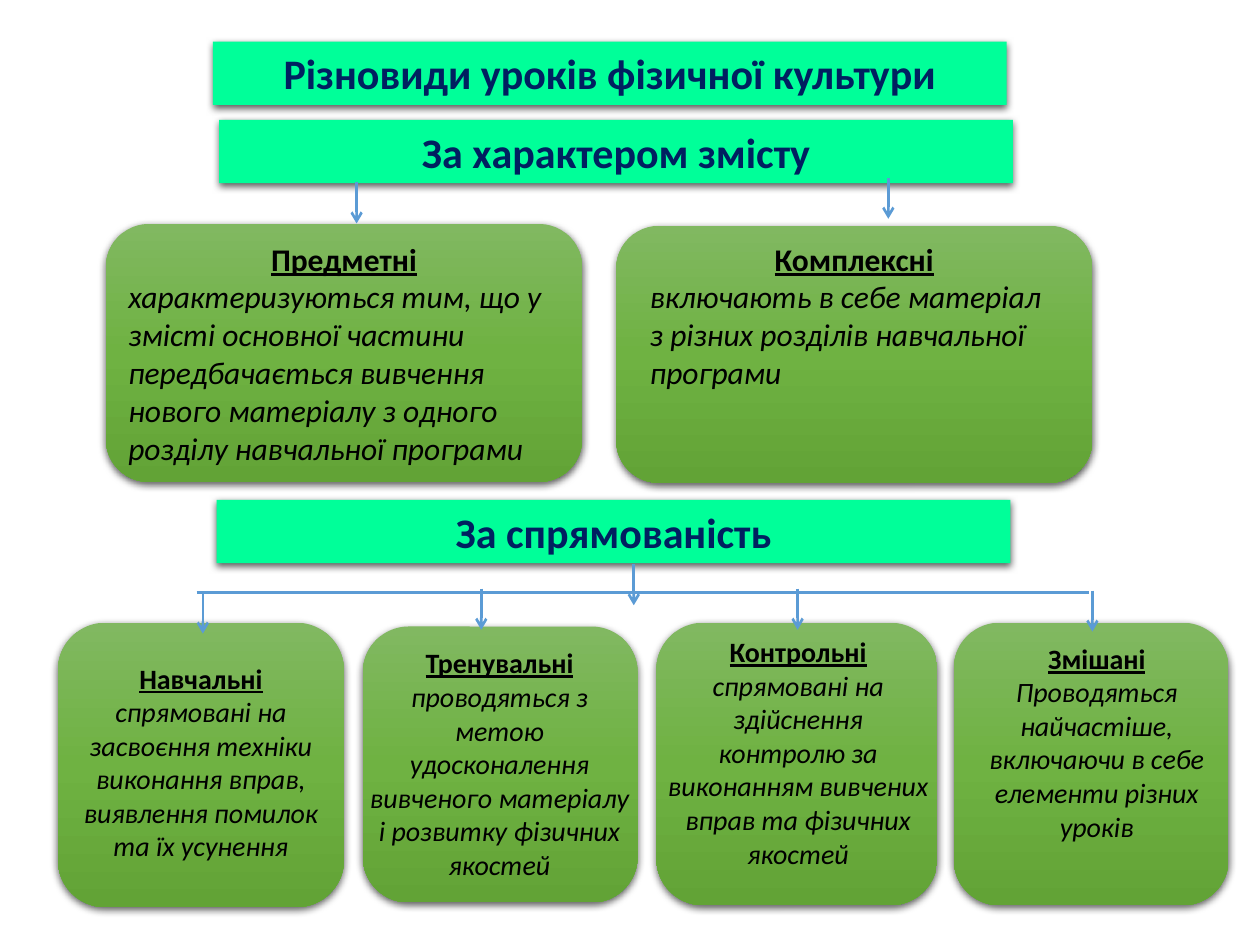
from copy import deepcopy
from dataclasses import dataclass
from typing import Any

from lxml.etree import SubElement
from pptx import Presentation
from pptx.dml.color import RGBColor
from pptx.enum.shapes import MSO_CONNECTOR, MSO_SHAPE
from pptx.enum.text import MSO_ANCHOR, MSO_AUTO_SIZE, PP_ALIGN
from pptx.oxml.ns import qn
from pptx.util import Inches, Pt

WIDTH, HEIGHT = Inches(10), Inches(7.5)
MINT = RGBColor(0x00, 0xFF, 0x99)
NAVY = RGBColor(0x00, 0x20, 0x60)
BLACK = RGBColor(0x00, 0x00, 0x00)
BLUE = RGBColor(0x5B, 0x9B, 0xD5)
GREENS = (
    RGBColor(0x81, 0xB8, 0x61),
    RGBColor(0x6F, 0xB2, 0x42),
    RGBColor(0x62, 0xA3, 0x36),
)

BAR_FORMAT = {"size": Pt(24), "bold": True}
HEADING_FORMAT = {"bold": True, "underline": True}
BODY_FORMAT = {"italic": True}
ARROW_LENGTH = 4.35
BRANCH_LEVEL = 62.7


@dataclass(frozen=True)
class Area:
    """A rectangle in percent of the slide's width and height."""

    left: float
    top: float
    width: float
    height: float

    def lengths(self) -> tuple[int, int, int, int]:
        return (across(self.left), down(self.top),
                across(self.width), down(self.height))


@dataclass(frozen=True)
class Bar:
    left: float
    top: float
    title: str


@dataclass(frozen=True)
class Card:
    panel: Area
    text: Area
    heading: str
    body: tuple[str, ...]
    size: int = 16
    align: PP_ALIGN = PP_ALIGN.CENTER


BARS = (
    Bar(16.9, 4.4, "Різновиди уроків фізичної культури"),
    Bar(17.4, 12.7, "За характером змісту"),
    Bar(17.2, 52.9, "За спрямованість"),
)

CARDS = (
    # Lessons by content
    Card(Area(8.4, 23.7, 37.8, 27.3), Area(9.2, 24.7, 36.2, 25.6), "Предметні",
         ("характеризуються тим, що у змісті основної частини",
          "передбачається вивчення нового матеріалу з одного розділу навчальної програми"),
         18, PP_ALIGN.LEFT),
    Card(Area(48.9, 23.9, 37.8, 27.2), Area(50.6, 24.7, 34.4, 17.5), "Комплексні",
         ("включають в себе матеріал з різних розділів навчальної програми",),
         18, PP_ALIGN.LEFT),
    # Lessons by purpose
    Card(Area(4.6, 65.9, 22.7, 30.1), Area(4.6, 69.3, 22.7, 22.9), "Навчальні",
         ("спрямовані на засвоєння техніки виконання вправ, виявлення помилок та їх усунення",)),
    Card(Area(28.8, 66.3, 21.8, 29.2), Area(28.3, 67.7, 22.7, 26.5), "Тренувальні",
         ("проводяться з метою удосконалення вивченого матеріалу і розвитку фізичних якостей",)),
    Card(Area(52.1, 65.9, 22.3, 29.9), Area(52, 66.5, 22.7, 26.5), "Контрольні",
         ("спрямовані на здійснення контролю за виконанням вивчених вправ та фізичних якостей",)),
    Card(Area(75.7, 65.9, 21.8, 29.9), Area(75.7, 67.2, 22.7, 22.9), "Змішані",
         ("Проводяться найчастіше, включаючи в себе елементи різних уроків",)),
)

# Left and top of each downward arrow
ARROWS = ((28.3, 19.3), (70.5, 18.8), (86.7, 62.5), (63.3, 62.3),
          (16.1, 62.7), (50.3, 59.7), (38.2, 62.3))


def across(percent: float) -> int:
    return round(WIDTH * percent / 100)


def down(percent: float) -> int:
    return round(HEIGHT * percent / 100)


def add_shadow(shape: Any) -> None:
    shape.shadow.inherit = False
    effects = shape._element.spPr.find(qn("a:effectLst"))
    shadow = SubElement(effects, qn("a:outerShdw"), blurRad=str(Pt(4.5)),
                        dist=str(Pt(1.5)), dir="5400000", algn="ctr", rotWithShape="0")
    color = SubElement(shadow, qn("a:srgbClr"), val=str(BLACK))
    SubElement(color, qn("a:alpha"), val="63000")


def add_panel(page: Any, area: Area) -> None:
    panel = page.shapes.add_shape(MSO_SHAPE.ROUNDED_RECTANGLE, *area.lengths())
    panel.line.fill.background()
    panel.fill.gradient()
    panel.fill.gradient_angle = 270
    # A new gradient has two stops; the third is a copy of the last
    stop_list = panel._element.spPr.find(".//" + qn("a:gsLst"))
    stop_list.append(deepcopy(stop_list[-1]))
    for index, (stop, color) in enumerate(zip(panel.fill.gradient_stops, GREENS)):
        stop.position = index / 2
        stop.color.rgb = color
    add_shadow(panel)


def write(paragraph: Any, text: str, color: RGBColor, align: PP_ALIGN,
          formats: dict[str, Any]) -> None:
    paragraph.alignment = align
    span = paragraph.add_run()
    span.text = text
    span.font.color.rgb = color
    for name, value in {"name": "Calibri", **formats}.items():
        setattr(span.font, name, value)


def prepare_frame(box: Any) -> Any:
    frame = box.text_frame
    settings = {"word_wrap": True, "vertical_anchor": MSO_ANCHOR.TOP,
                "auto_size": MSO_AUTO_SIZE.SHAPE_TO_FIT_TEXT}
    for name, value in settings.items():
        setattr(frame, name, value)
    return frame


def add_bar(page: Any, bar: Bar) -> None:
    area = Area(bar.left, bar.top, 63, 6.7)
    box = page.shapes.add_shape(MSO_SHAPE.RECTANGLE, *area.lengths())
    box.fill.solid()
    box.fill.fore_color.rgb = MINT
    box.line.fill.background()
    add_shadow(box)
    write(prepare_frame(box).paragraphs[0], bar.title, NAVY, PP_ALIGN.CENTER, BAR_FORMAT)


def add_card(page: Any, card: Card) -> None:
    add_panel(page, card.panel)
    frame = prepare_frame(page.shapes.add_textbox(*card.text.lengths()))
    size = {"size": Pt(card.size)}
    write(frame.paragraphs[0], card.heading, BLACK, PP_ALIGN.CENTER, HEADING_FORMAT | size)
    for text in card.body:
        write(frame.add_paragraph(), text, BLACK, card.align, BODY_FORMAT | size)


def add_line(page: Any, start: tuple[float, float], end: tuple[float, float],
             arrow: bool = False) -> None:
    line = page.shapes.add_connector(MSO_CONNECTOR.STRAIGHT, across(start[0]), down(start[1]),
                                     across(end[0]), down(end[1]))
    line.line.color.rgb = BLUE
    line.line.width = Pt(1.5)
    if arrow:
        SubElement(line.line._get_or_add_ln(), qn("a:tailEnd"), type="arrow")
    SubElement(line._element.spPr, qn("a:effectLst"))


def main() -> None:
    deck = Presentation()
    deck.slide_width, deck.slide_height = WIDTH, HEIGHT
    page = deck.slides.add_slide(deck.slide_layouts[6])

    # Title bars and cards
    for bar in BARS:
        add_bar(page, bar)
    for card in CARDS:
        add_card(page, card)

    # Branch line and arrows
    add_line(page, (15.6, BRANCH_LEVEL), (86.4, BRANCH_LEVEL))
    for left, top in ARROWS:
        add_line(page, (left, top), (left, top + ARROW_LENGTH), arrow=True)

    deck.save("out.pptx")


if __name__ == "__main__":
    main()
